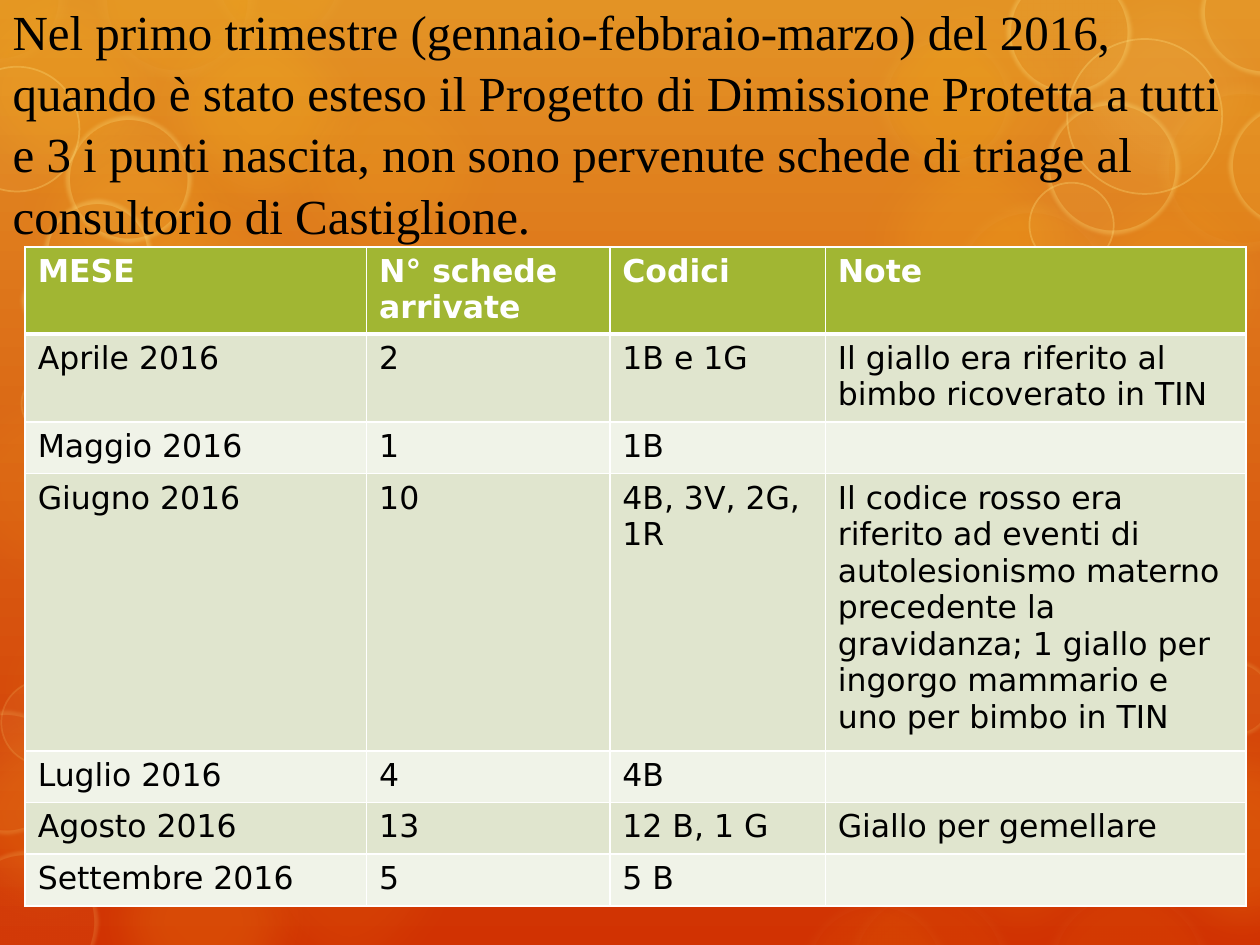
from dataclasses import dataclass

import lxml.etree
import pptx
import pptx.dml.color
import pptx.enum.shapes
import pptx.enum.text
import pptx.oxml.ns
import pptx.util

PX = 9144  # EMU in one px, 100 px to the inch
GOLD, YELLOW, CREAM = "FDC61B", "FFE281", "FEEBAE"
WHITE, BLACK = "FFFFFF", "000000"
qn = pptx.oxml.ns.qn


@dataclass(frozen=True)
class BubbleStyle:
    fill: str
    fill_alpha: int
    line: str = ""
    line_pt: float = 0
    line_alpha: int = 0
    soft_pt: float = 0


@dataclass(frozen=True)
class Bubble:
    left: int
    top: int
    diameter: int


def px(n: int) -> int:
    return n * PX


def rgb(value: str) -> pptx.dml.color.RGBColor:
    return pptx.dml.color.RGBColor.from_string(value)


def apply(target, values: dict) -> None:
    for name, value in values.items():
        setattr(target, name, value)


def paint(fill, color: str, parent, alpha: int) -> None:
    """Solid fill with an opacity in percent."""
    fill.solid()
    fill.fore_color.rgb = rgb(color)
    clr = parent.find(qn("a:solidFill")).find(qn("a:srgbClr"))
    lxml.etree.SubElement(clr, qn("a:alpha"), val=str(alpha * 1000))


def draw_bubble(s, b: Bubble, style: BubbleStyle) -> None:
    sp = s.shapes.add_shape(pptx.enum.shapes.MSO_SHAPE.OVAL,
                            px(b.left), px(b.top), px(b.diameter), px(b.diameter))
    sp.shadow.inherit = False
    pr = sp._element.spPr
    paint(sp.fill, style.fill, pr, style.fill_alpha)
    if style.line:
        sp.line.width = pptx.util.Pt(style.line_pt)
        paint(sp.line.fill, style.line, pr.find(qn("a:ln")), style.line_alpha)
    else:
        sp.line.fill.background()
    if style.soft_pt:
        lxml.etree.SubElement(pr.find(qn("a:effectLst")), qn("a:softEdge"),
                              rad=str(pptx.util.Pt(style.soft_pt)))


def add_border(tc_pr, side: str, width_pt: int) -> None:
    ln = lxml.etree.SubElement(tc_pr, qn(f"a:ln{side}"), w=str(pptx.util.Pt(width_pt)))
    fill = lxml.etree.SubElement(ln, qn("a:solidFill"))
    lxml.etree.SubElement(fill, qn("a:srgbClr"), val=WHITE)


def fill_cell(cell, text: str, row: int) -> None:
    tc_pr = cell._tc.get_or_add_tcPr()
    for side in "LRTB":
        thick = (row, side) in ((0, "B"), (1, "T"))
        add_border(tc_pr, side, 3 if thick else 1)
    cell.fill.solid()
    cell.fill.fore_color.rgb = rgb("A1B633" if row == 0 else ("F0F3E8", "E0E5CE")[row % 2])
    p = cell.text_frame.paragraphs[0]
    p.text = text
    apply(p.font, {"name": "DejaVu Sans", "size": pptx.util.Pt(18), "bold": row == 0})
    p.font.color.rgb = rgb(WHITE if row == 0 else BLACK)


def glow(alpha: int, color: str = GOLD) -> BubbleStyle:
    return BubbleStyle(color, alpha, soft_pt=25)


def ring(line_pt: int, alpha: int) -> BubbleStyle:
    return BubbleStyle(YELLOW, 5, YELLOW, line_pt, alpha, 2.5 if line_pt > 1 else 0)


# Background bubbles: left, top, diameter
BUBBLES = [
    (glow(5), [(729, 477, 209)]),
    (glow(8), [(-25, 442, 209), (77, 524, 209), (173, 596, 209), (-70, 282, 209)]),
    (glow(10), [(57, 120, 209), (205, 31, 209), (669, -30, 209), (706, 562, 209),
                (675, 262, 133)]),
    (glow(10, YELLOW), [(820, -33, 209)]),
    (glow(14), [(-56, -33, 209)]),
    (glow(15), [(0, 72, 209), (820, 120, 209), (669, 86, 209)]),
    (glow(16), [(57, 627, 209), (881, 562, 209), (-69, 541, 209)]),
    (glow(20), [(101, -18, 209)]),
    (BubbleStyle(GOLD, 10, CREAM, 14, 6, 10),
     [(918, 65, 137), (694, 23, 114), (752, 159, 133), (789, 224, 114),
      (847, 291, 79), (75, -66, 131), (164, -75, 114), (-57, -57, 113)]),
    (BubbleStyle(GOLD, 6, CREAM, 14, 4, 10),
     [(30, 473, 153), (632, 710, 125), (669, 701, 137), (827, 701, 137)]),
    (ring(1, 15), [(1, 540, 67), (834, 614, 81), (820, 539, 81), (17, 295, 51),
                   (52, 346, 50)]),
    (ring(5, 15), [(-35, 675, 113), (-44, 564, 98), (763, 573, 81), (900, 620, 66),
                   (883, 448, 61), (920, 553, 61), (950, 524, 61), (937, 370, 33),
                   (918, 387, 33), (941, 403, 33), (30, 370, 39)]),
    (ring(1, 30), [(-36, 53, 99), (41, 206, 67), (847, 31, 123), (817, 145, 67)]),
    (ring(5, 30), [(52, 92, 100), (35, 159, 85), (17, 210, 57), (799, -24, 99),
                   (953, -40, 100), (975, 82, 99), (830, 80, 106)]),
]

TITLE = ("Nel primo trimestre (gennaio-febbraio-marzo) del 2016, quando è stato esteso "
         "il Progetto di Dimissione Protetta a tutti e 3 i punti nascita, non sono "
         "pervenute schede di triage al consultorio di Castiglione.")

COL_WIDTHS = [271, 193, 171, 334]
ROW_HEIGHTS = [69, 70, 41, 220, 41, 41, 41]
ROWS = [
    ("MESE", "N° schede arrivate", "Codici", "Note"),
    ("Aprile 2016", "2", "1B e 1G", "Il giallo era riferito al bimbo ricoverato in TIN"),
    ("Maggio 2016", "1", "1B", ""),
    ("Giugno 2016", "10", "4B, 3V, 2G, 1R",
     "Il codice rosso era riferito ad eventi di autolesionismo materno precedente la "
     "gravidanza; 1 giallo per ingorgo mammario e uno per bimbo in TIN"),
    ("Luglio 2016", "4", "4B", ""),
    ("Agosto 2016", "13", "12 B, 1 G", "Giallo per gemellare"),
    ("Settembre 2016", "5", "5 B", ""),
]


def draw_background(s) -> None:
    fill = s.background.fill
    fill.gradient()
    fill.gradient_angle = 270
    for stop, color in zip(fill.gradient_stops, ("E39325", "D13202")):
        stop.color.rgb = rgb(color)
    for style, places in BUBBLES:
        for place in places:
            draw_bubble(s, Bubble(*place), style)


def draw_title(s) -> None:
    sp = s.shapes.title
    s.shapes._spTree.append(sp._element)  # in front of the bubbles
    apply(sp, {"left": 0, "top": px(-3), "width": px(1000), "height": px(199)})
    tf = sp.text_frame
    apply(tf, {"word_wrap": True, "auto_size": pptx.enum.text.MSO_AUTO_SIZE.NONE,
               "vertical_anchor": pptx.enum.text.MSO_ANCHOR.MIDDLE})
    p = tf.paragraphs[0]
    apply(p, {"alignment": pptx.enum.text.PP_ALIGN.LEFT, "line_spacing": 1.04})
    r = p.add_run()
    r.text = TITLE
    apply(r.font, {"name": "Times New Roman", "size": pptx.util.Pt(28)})
    r.font.color.rgb = rgb(BLACK)


def draw_table(s) -> None:
    table = s.shapes.add_table(len(ROWS), len(COL_WIDTHS), px(20), px(196),
                               px(sum(COL_WIDTHS)), px(sum(ROW_HEIGHTS))).table
    for column, width in zip(table.columns, COL_WIDTHS):
        column.width = px(width)
    for i, (row, height, texts) in enumerate(zip(table.rows, ROW_HEIGHTS, ROWS)):
        row.height = px(height)
        for cell, text in zip(row.cells, texts):
            fill_cell(cell, text, i)


def main() -> None:
    prs = pptx.Presentation()
    apply(prs, {"slide_width": px(1000), "slide_height": px(750)})
    s = prs.slides.add_slide(prs.slide_layouts[5])  # title only
    draw_background(s)
    draw_title(s)
    draw_table(s)
    prs.save("out.pptx")


if __name__ == "__main__":
    main()
